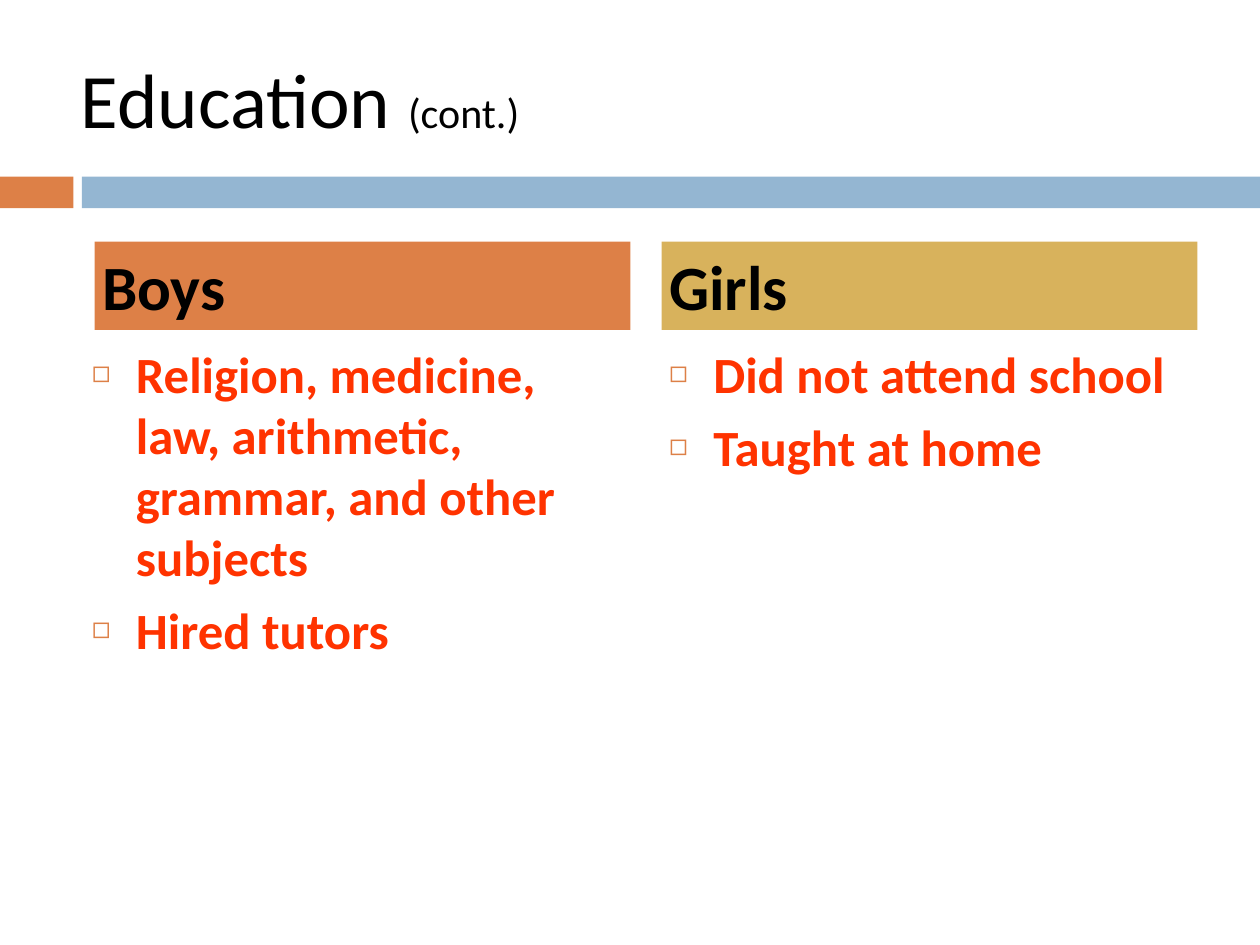
from lxml.etree import SubElement
from pptx import Presentation
from pptx.dml.color import RGBColor
from pptx.enum.shapes import MSO_SHAPE
from pptx.enum.text import MSO_ANCHOR, MSO_AUTO_SIZE, PP_ALIGN
from pptx.oxml.ns import qn
from pptx.util import Cm, Pt

HUES = {"orange": "DD8047", "blue": "94B6D2", "gold": "D8B25C",
        "red": "FF3300", "black": "000000"}
FRAME = {"word_wrap": True, "auto_size": MSO_AUTO_SIZE.NONE,
         "margin_left": Cm(0.15), "margin_right": Cm(0.15),
         "margin_top": Cm(0.13), "margin_bottom": Cm(0.13)}


def place(shape, box, anchor):
    """Move a placeholder and format its text frame."""
    for name, size in zip(("left", "top", "width", "height"), box):
        setattr(shape, name, Cm(size))
    for name, value in {**FRAME, "vertical_anchor": anchor}.items():
        setattr(shape.text_frame, name, value)


def write(para, text, size, hue, bold, space=0):
    """Add a formatted run to a left-aligned paragraph."""
    para.alignment = PP_ALIGN.LEFT
    para.space_before = Pt(space)
    run = para.add_run()
    run.text = text
    form = {"name": "Calibri", "size": Pt(size), "bold": bold}
    for name, value in form.items():
        setattr(run.font, name, value)
    run.font.color.rgb = RGBColor.from_string(HUES[hue])


deck = Presentation()
deck.slide_width, deck.slide_height = Cm(25.4), Cm(19.05)
slide = deck.slides.add_slide(deck.slide_layouts.get_by_name("Comparison"))
title, *slots = slide.placeholders

# Band under the title
for left, width, hue in ((0, 1.48, "orange"), (1.65, 23.75, "blue")):
    bar = slide.shapes.add_shape(
        MSO_SHAPE.RECTANGLE, Cm(left), Cm(3.56), Cm(width), Cm(0.64))
    bar.shadow.inherit = False
    bar.fill.solid()
    bar.fill.fore_color.rgb = RGBColor.from_string(HUES[hue])
    bar.line.fill.background()

# Title
place(title, (1.48, 0.76, 22.65, 2.42), MSO_ANCHOR.MIDDLE)
for text, size in (("Education ", 44), ("(cont.)", 24)):
    write(title.text_frame.paragraphs[0], text, size, "black", False)

# Columns: heading, its left edge and fill, list left edge, list items
COLS = (
    ("Boys", 1.91, "orange", 1.7,
     ("Religion, medicine, law, arithmetic, grammar, and other subjects",
      "Hired tutors")),
    ("Girls", 13.34, "gold", 13.34,
     ("Did not attend school", "Taught at home")),
)
for (name, left, hue, start, items), head, body in zip(
        COLS, slots[::2], slots[1::2]):
    # Heading
    place(head, (left, 4.87, 10.8, 1.78), MSO_ANCHOR.MIDDLE)
    head.fill.solid()
    head.fill.fore_color.rgb = RGBColor.from_string(HUES[hue])
    write(head.text_frame.paragraphs[0], name, 36, "black", True, 7)

    # Bulleted list
    place(body, (start, 6.78, 10.8, 9.96), MSO_ANCHOR.TOP)
    frame = body.text_frame
    for num, text in enumerate(items):
        para = frame.add_paragraph() if num else frame.paragraphs[0]
        write(para, text, 29, "red", True, 7)
        props = para._p.get_or_add_pPr()
        props.set("marL", str(Cm(0.89)))
        props.set("indent", str(-Cm(0.89)))
        tint = SubElement(props, qn("a:buClr"))
        SubElement(tint, qn("a:srgbClr"), val=HUES["orange"])
        SubElement(props, qn("a:buSzPct"), val="60000")
        SubElement(props, qn("a:buChar"), char="◻")

deck.save("out.pptx")
